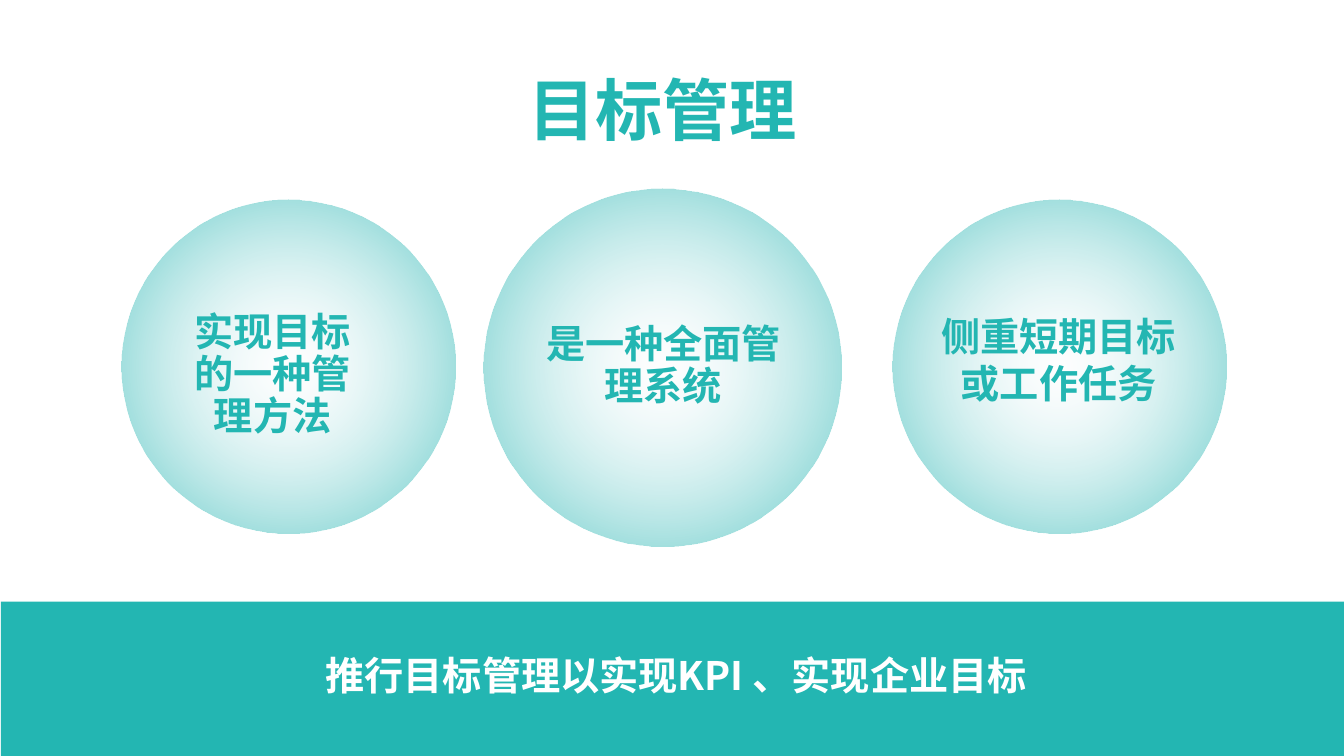
from dataclasses import dataclass

from lxml.etree import SubElement
from pptx import Presentation
from pptx.dml.color import RGBColor
from pptx.enum.shapes import MSO_SHAPE as SHAPE
from pptx.enum.text import MSO_AUTO_SIZE as AUTO, PP_ALIGN as ALIGN
from pptx.oxml import parse_xml
from pptx.oxml.ns import nsdecls, qn
from pptx.shapes.autoshape import Shape
from pptx.slide import Slide
from pptx.util import Inches, Pt

TEAL = RGBColor(0x23, 0xB6, 0xB2)
PALE = RGBColor(0xF7, 0xFA, 0xFD)
WHITE = RGBColor(0xFF, 0xFF, 0xFF)
FONT = "Noto Sans CJK SC"


@dataclass
class Circle:
    left: float
    top: float
    size: float


@dataclass
class Label:
    text: str
    left: float
    top: float
    width: float
    height: float
    size: int = 28
    color: RGBColor = TEAL
    spacing: float = 0.9
    align: ALIGN = ALIGN.CENTER
    wrap: bool = True


CIRCLES = [
    Circle(1.21, 1.98, 3.31),
    Circle(4.8, 1.87, 3.55),
    Circle(8.85, 1.98, 3.31),
]

LABELS = [
    Label("目标管理", 5.14, 0.63, 2.87, 0.91, size=48, spacing=1.0,
          align=ALIGN.LEFT, wrap=False),
    Label("实现目标的一种管理方法", 1.81, 3.05, 1.79, 1.37),
    Label("是一种全面管理系统", 5.19, 3.17, 2.78, 0.95),
    Label("侧重短期目标或工作任务", 9.21, 3.05, 2.58, 1.04, spacing=1.0),
    Label("推行目标管理以实现KPI 、实现企业目标", 2.83, 6.46, 7.75, 0.52, color=WHITE),
]


def add_plain_shape(s: Slide, kind: SHAPE, left: float, top: float,
                    width: float, height: float) -> Shape:
    sp = s.shapes.add_shape(kind, Inches(left), Inches(top),
                            Inches(width), Inches(height))
    sp.shadow.inherit = False
    sp.line.fill.background()
    return sp


def add_circle(s: Slide, c: Circle) -> None:
    sp = add_plain_shape(s, SHAPE.OVAL, c.left, c.top, c.size, c.size)
    sp.fill.background()
    stops = "".join(
        f'<a:gs pos="{pos}"><a:srgbClr val="{color}"><a:alpha val="{alpha}"/>'
        f'</a:srgbClr></a:gs>'
        for pos, color, alpha in ((0, PALE, 12000), (100000, TEAL, 78000))
    )
    grad = parse_xml(
        f'<a:gradFill {nsdecls("a")} rotWithShape="1"><a:gsLst>{stops}</a:gsLst>'
        '<a:path path="circle">'
        '<a:fillToRect l="50000" t="50000" r="50000" b="50000"/>'
        '</a:path></a:gradFill>'
    )
    sp_pr = sp.element.spPr
    sp_pr.replace(sp_pr.find(qn("a:noFill")), grad)


def add_label(s: Slide, label: Label) -> None:
    tf = s.shapes.add_textbox(Inches(label.left), Inches(label.top),
                              Inches(label.width), Inches(label.height)).text_frame
    tf.word_wrap = label.wrap
    tf.auto_size = AUTO.SHAPE_TO_FIT_TEXT
    tf.text = label.text
    p = tf.paragraphs[0]
    p.alignment = label.align
    p.line_spacing = label.spacing
    r = p.runs[0]
    r.font.size = Pt(label.size)
    r.font.bold = True
    r.font.color.rgb = label.color
    r.font.name = FONT
    SubElement(r.font._element, qn("a:ea")).set("typeface", FONT)


def main() -> None:
    prs = Presentation()
    prs.slide_width, prs.slide_height = Inches(13.33), Inches(7.5)
    s = prs.slides.add_slide(prs.slide_layouts[6])
    band = add_plain_shape(s, SHAPE.RECTANGLE, 0.01, 5.97, 13.34, 1.54)
    band.fill.solid()
    band.fill.fore_color.rgb = TEAL
    for circle in CIRCLES:
        add_circle(s, circle)
    for label in LABELS:
        add_label(s, label)
    prs.save("out.pptx")


if __name__ == "__main__":
    main()
